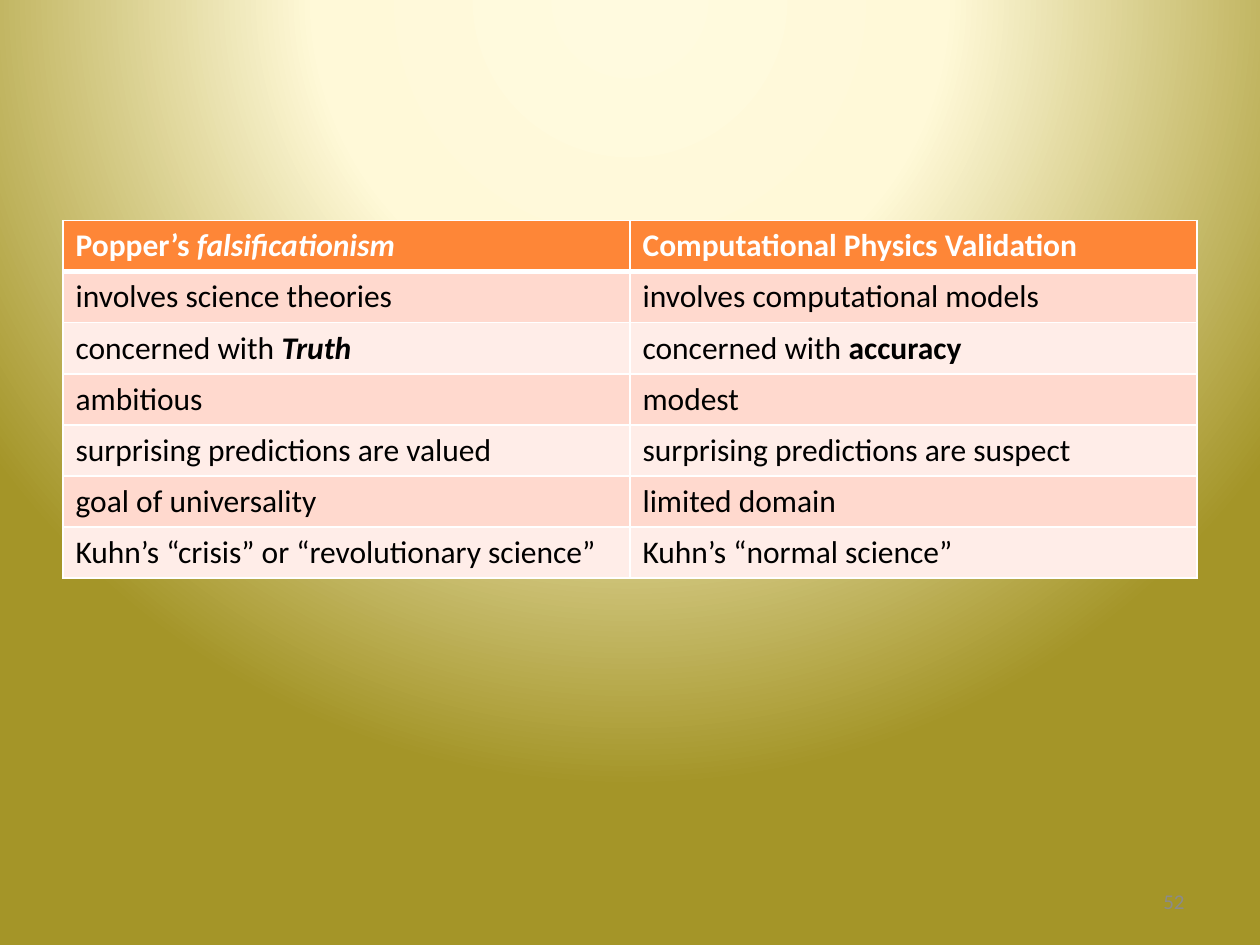
from dataclasses import dataclass

from pptx import Presentation
from pptx import util as u
from pptx.dml.color import RGBColor
from pptx.enum import text
from pptx.oxml import parse_xml
from pptx.oxml.ns import nsdecls


@dataclass(frozen=True)
class Theme:
    font: str = "Calibri"
    table_size: int = 18
    number_size: int = 12
    ink: str = "000000"
    white: str = "FFFFFF"
    header: str = "FE8637"
    bands: tuple = ("FFD9CE", "FFEDE8")
    number: str = "8B8B8B"
    backdrop: tuple = ((0, "FFFADF"), (40, "FFF9D8"), (100, "A49528"))


class Deck:
    def __init__(self, theme):
        self.theme = theme
        self.prs = Presentation()
        self.prs.slide_width, self.prs.slide_height = u.Inches(10), u.Inches(7.5)
        self.s = self.prs.slides.add_slide(self.prs.slide_layouts[6])

    def background(self):
        """Radial gradient centred above the slide."""
        fill = self.s.background.fill
        fill.solid()
        fill.fore_color.rgb = RGBColor.from_string(self.theme.white)
        stops = "".join(
            f'<a:gs pos="{pos * 1000}"><a:srgbClr val="{color}"/></a:gs>'
            for pos, color in self.theme.backdrop)
        grad = parse_xml(
            f'<a:gradFill {nsdecls("a")} rotWithShape="1"><a:gsLst>{stops}</a:gsLst>'
            '<a:path path="circle"><a:fillToRect l="50000" t="-80000" r="50000" '
            'b="180000"/></a:path></a:gradFill>')
        solid = self.s.background._cSld.bg.bgPr[0]
        solid.getparent().replace(solid, grad)

    def run(self, p, words, size, color, bold=False, italic=False):
        r = p.add_run()
        r.text = words
        r.font.name, r.font.size = self.theme.font, u.Pt(size)
        r.font.bold, r.font.italic = bold, italic
        r.font.color.rgb = RGBColor.from_string(color)

    def borders(self, cell, bottom):
        tcPr = cell._tc.get_or_add_tcPr()
        widths = {"L": 1, "R": 1, "T": 1, "B": bottom}
        for i, (side, width) in enumerate(widths.items()):
            tcPr.insert(i, parse_xml(
                f'<a:ln{side} {nsdecls("a")} w="{u.Pt(width)}"><a:solidFill>'
                f'<a:srgbClr val="{self.theme.white}"/></a:solidFill></a:ln{side}>'))

    def table(self, rows, x, y, w, h):
        """Each cell is a list of (words, style letters) runs."""
        t = self.theme
        tbl = self.s.shapes.add_table(
            len(rows), len(rows[0]), *map(u.Inches, (x, y, w, h))).table
        for i, row in enumerate(rows):
            head = i == 0
            fill = t.header if head else t.bands[(i - 1) % 2]
            for j, runs in enumerate(row):
                cell = tbl.cell(i, j)
                cell.fill.solid()
                cell.fill.fore_color.rgb = RGBColor.from_string(fill)
                # the rule below the header meets the first body row
                self.borders(cell, 3 if head else 1)
                if i == 1:
                    top = cell._tc.tcPr[2]
                    top.set("w", str(u.Pt(3)))
                for words, style in runs:
                    self.run(cell.text_frame.paragraphs[0], words, t.table_size,
                             t.white if head else t.ink,
                             head or "b" in style, "i" in style)

    def number(self, words, x, y, w, h):
        tf = self.s.shapes.add_textbox(*map(u.Inches, (x, y, w, h))).text_frame
        tf.word_wrap = True
        tf.vertical_anchor = text.MSO_ANCHOR.MIDDLE
        p = tf.paragraphs[0]
        p.alignment = text.PP_ALIGN.RIGHT
        self.run(p, words, self.theme.number_size, self.theme.number)


def plain(words):
    return [(words, "")]


COMPARISON = [
    [[("Popper’s ", ""), ("falsificationism", "i")],
     plain("Computational Physics Validation")],
    [plain("involves science theories"), plain("involves computational models")],
    [[("concerned with ", ""), ("Truth", "bi")],
     [("concerned with ", ""), ("accuracy", "b")]],
    [plain("ambitious"), plain("modest")],
    [plain("surprising predictions are valued"),
     plain("surprising predictions are suspect")],
    [plain("goal of universality"), plain("limited domain")],
    [plain("Kuhn’s “crisis” or “revolutionary science”"),
     plain("Kuhn’s “normal science”")],
]


def main():
    deck = Deck(Theme())
    deck.background()
    # Comparison table
    deck.table(COMPARISON, 0.5, 1.75, 9, 2.84)
    # Slide number
    deck.number("52", 7.17, 6.95, 2.33, 0.4)
    deck.prs.save("out.pptx")


if __name__ == "__main__":
    main()
